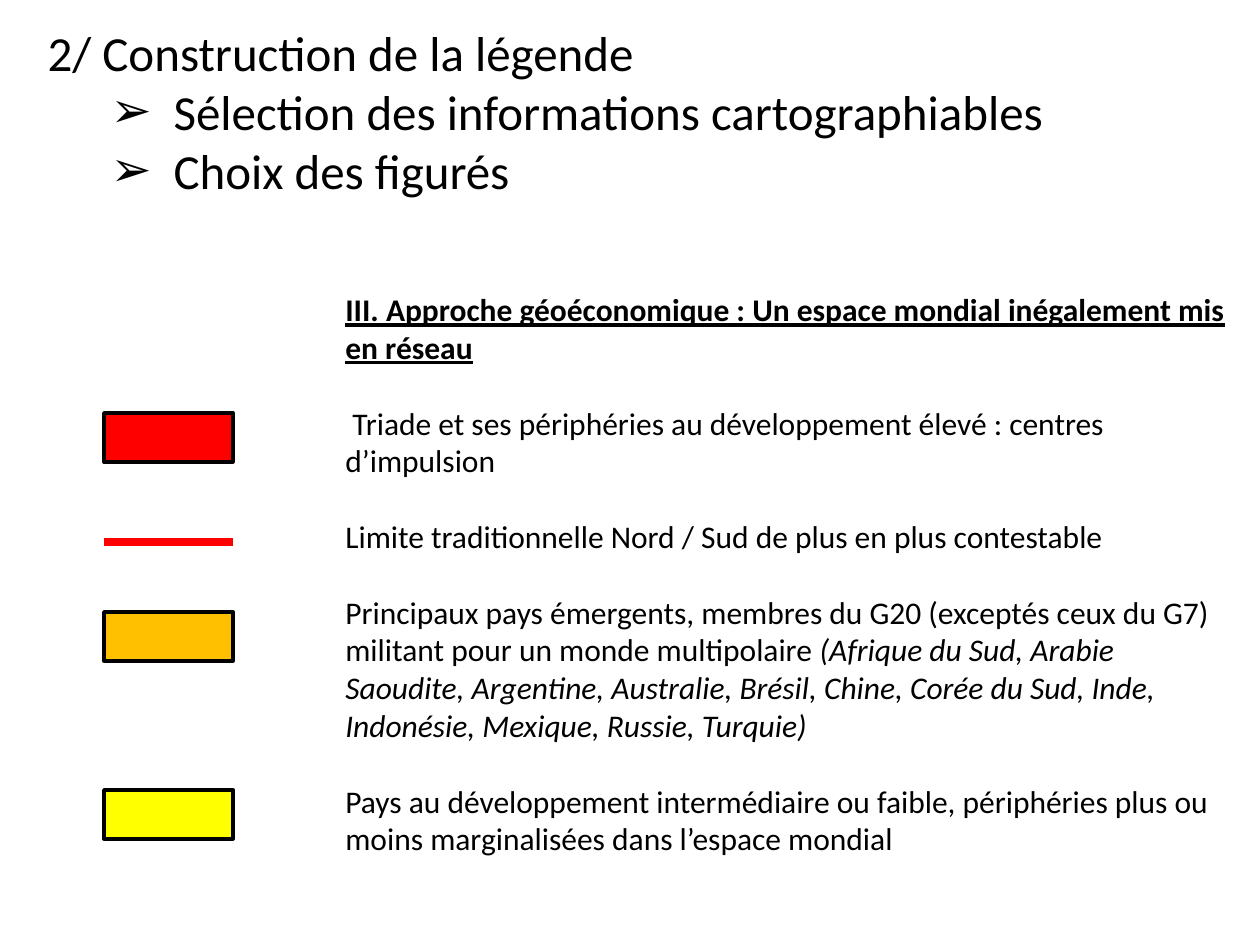
from lxml import etree
from pptx import Presentation
from pptx import util as u
from pptx.dml.color import RGBColor
from pptx.enum import shapes, text
from pptx.oxml import ns

FONT = "Calibri"
SYMBOL_LEFT, SYMBOL_WIDTH, SWATCH_HEIGHT = 104, 129, 49

SELECTION_STEPS = ["Sélection des informations cartographiables", "Choix des figurés"]

# Each entry is a list of (wording, style) runs
LEGEND = [
    [("III. Approche géoéconomique : Un espace mondial inégalement mis en réseau",
      {"bold": True, "underline": True})],
    [(" Triade et ses périphéries au développement élevé : centres d’impulsion", {})],
    [("Limite traditionnelle Nord / Sud de plus en plus contestable", {})],
    [("Principaux pays émergents, membres du G20 (exceptés ceux du G7) militant "
      "pour un monde multipolaire ", {}),
     ("(Afrique du Sud, Arabie Saoudite, Argentine, Australie, Brésil, Chine, "
      "Corée du Sud, Inde, Indonésie, Mexique, Russie, Turquie)", {"italic": True})],
    [("Pays au développement intermédiaire ou faible, périphéries plus ou moins "
      "marginalisées dans l’espace mondial", {})],
]

SWATCHES = [(413, "FF0000"), (612, "FFC000"), (790, "FFFF00")]


def px(length):
    return u.Emu(round(length * 914400 / 126))


def color(value):
    return RGBColor.from_string(value)


def place(shape, left, top, width, height):
    shape.left, shape.top = px(left), px(top)
    shape.width, shape.height = px(width), px(height)


def prepare_frame(shape):
    frame = shape.text_frame
    frame.auto_size = text.MSO_AUTO_SIZE.NONE
    frame.word_wrap = True
    frame.vertical_anchor = text.MSO_ANCHOR.TOP
    return frame


def add_paragraph(frame, runs, size, gap=0):
    """Fill the first empty paragraph, or append one."""
    first = frame.paragraphs[0]
    paragraph = frame.add_paragraph() if first.runs else first
    paragraph.alignment = text.PP_ALIGN.LEFT
    paragraph.space_before, paragraph.space_after = u.Pt(0), u.Pt(gap)
    for wording, style in runs:
        run = paragraph.add_run()
        run.text = wording
        run.font.name, run.font.size = FONT, u.Pt(size)
        run.font.color.rgb = color("000000")
        for attribute, value in style.items():
            setattr(run.font, attribute, value)
    return paragraph


def set_bullet(paragraph, symbol):
    properties = paragraph._p.get_or_add_pPr()
    properties.set("marL", str(u.Inches(1)))
    properties.set("indent", str(u.Inches(-0.5)))
    bullet = etree.SubElement(properties, ns.qn("a:buChar"))
    bullet.set("char", symbol)


def add_swatch(slide, top, fill):
    swatch = slide.shapes.add_shape(
        shapes.MSO_SHAPE.RECTANGLE, px(SYMBOL_LEFT), px(top),
        px(SYMBOL_WIDTH), px(SWATCH_HEIGHT))
    swatch.shadow.inherit = False
    swatch.fill.solid()
    swatch.fill.fore_color.rgb = color(fill)
    swatch.line.color.rgb = color("000000")
    swatch.line.width = u.Pt(2)


def add_limit(slide, y, stroke):
    limit = slide.shapes.add_connector(
        shapes.MSO_CONNECTOR.STRAIGHT, px(SYMBOL_LEFT), px(y),
        px(SYMBOL_LEFT + SYMBOL_WIDTH), px(y))
    limit.line.color.rgb = color(stroke)
    limit.line.width = u.Pt(5)
    etree.SubElement(limit._element.spPr, ns.qn("a:effectLst"))


def main():
    deck = Presentation()
    deck.slide_width, deck.slide_height = u.Inches(10), u.Inches(7.5)
    slide = deck.slides.add_slide(deck.slide_layouts[1])

    # Heading and steps
    heading, steps = slide.shapes.title, slide.placeholders[1]
    place(heading, 35, 16, 1032, 72)
    add_paragraph(prepare_frame(heading), [("2/ Construction de la légende", {})], 28)
    place(steps, 35, 75, 1032, 131)
    steps_frame = prepare_frame(steps)
    for step in SELECTION_STEPS:
        set_bullet(add_paragraph(steps_frame, [(step, {})], 28), "➢")

    # Legend wording
    legend = slide.shapes.add_textbox(px(333), px(284), px(910), px(585))
    legend_frame = prepare_frame(legend)
    for runs in LEGEND:
        add_paragraph(legend_frame, runs, 18, gap=21.6)

    # Legend symbols
    for top, fill in SWATCHES:
        add_swatch(slide, top, fill)
    add_limit(slide, 542, "FF0000")

    deck.save("out.pptx")


if __name__ == "__main__":
    main()
